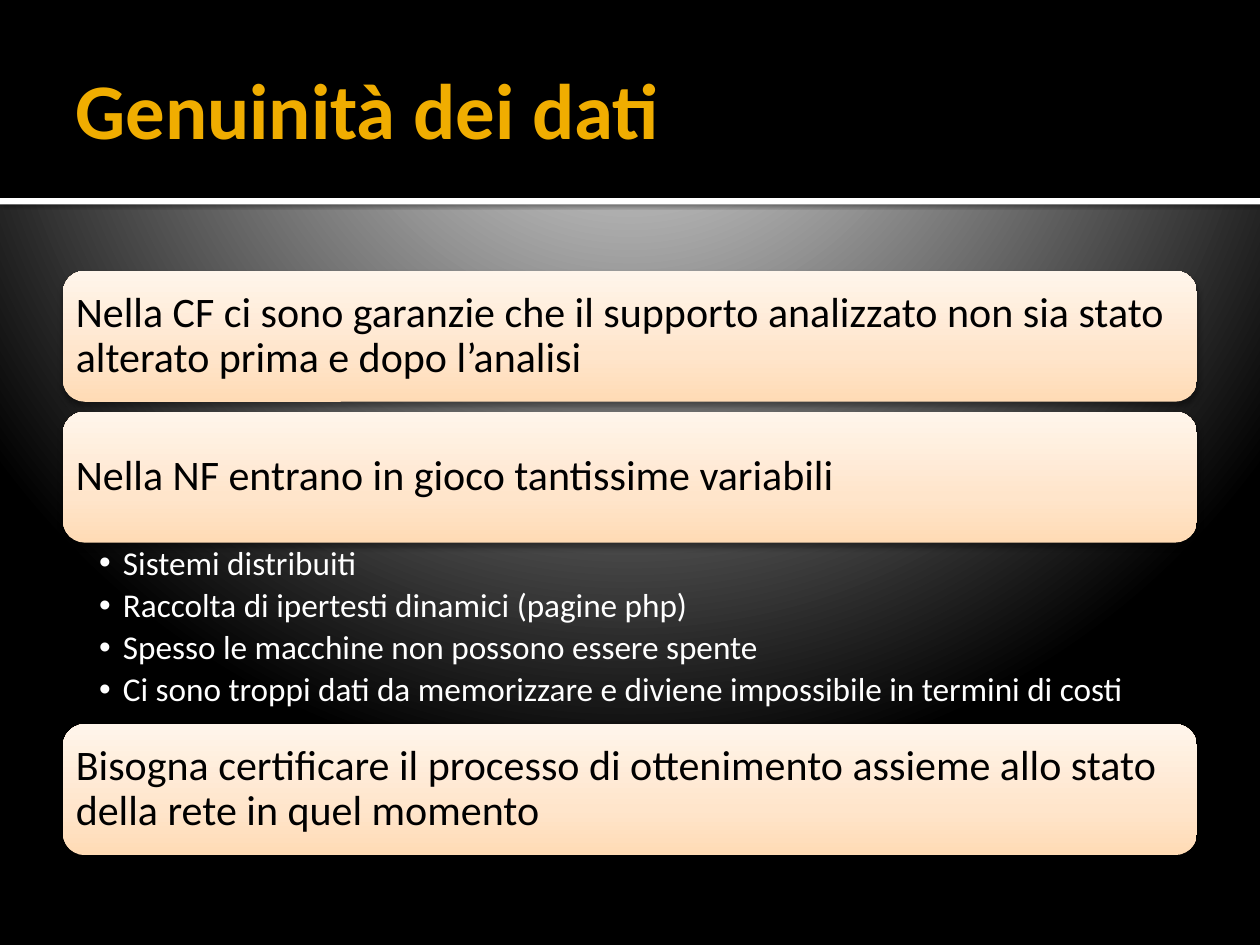
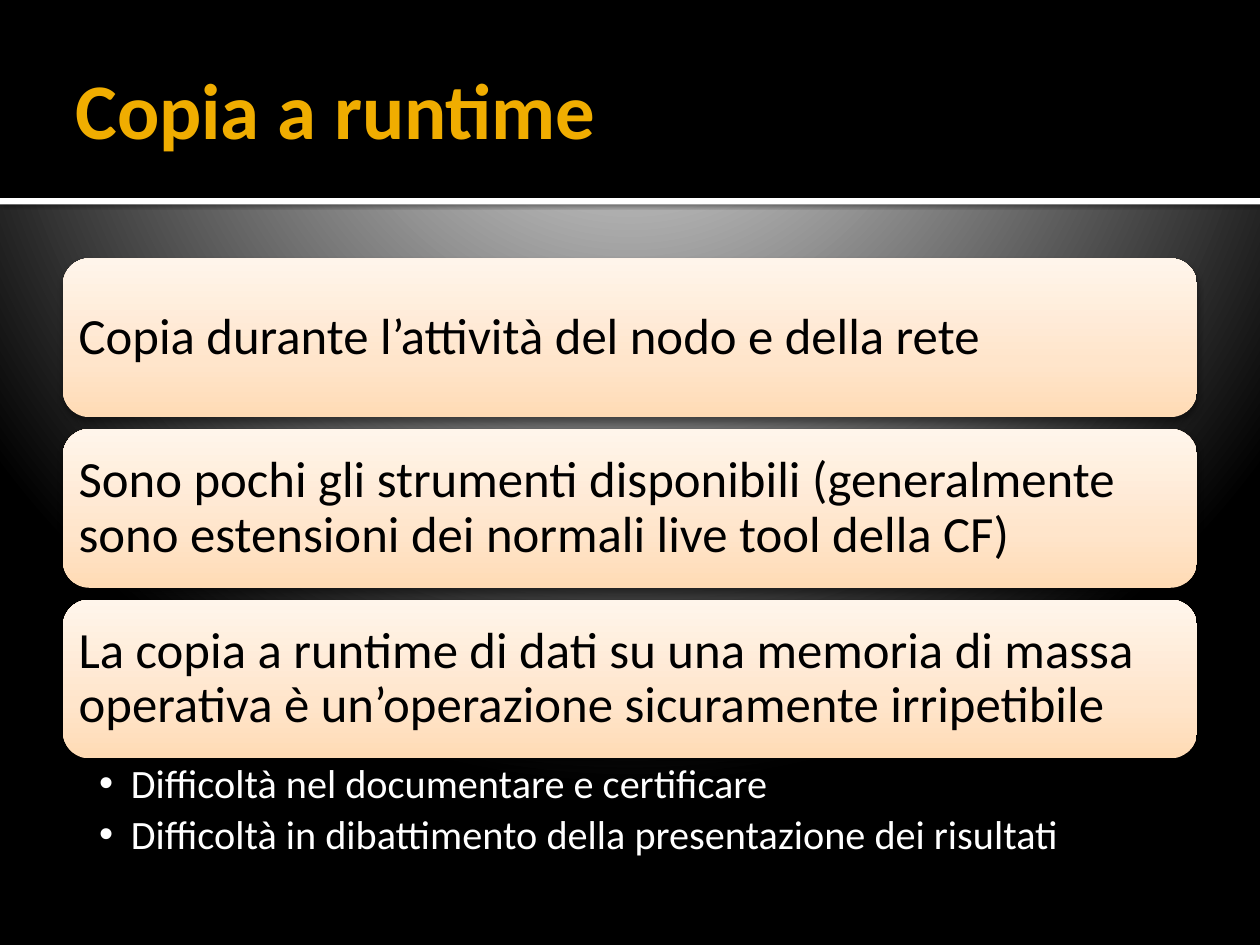
from lxml import etree
from pptx import Presentation
from pptx.dml.color import RGBColor
from pptx.enum.shapes import MSO_SHAPE
from pptx.enum.text import MSO_ANCHOR, PP_ALIGN
from pptx.oxml.ns import qn
from pptx.util import Cm, Pt

RECT = MSO_SHAPE.RECTANGLE
ROUNDED = MSO_SHAPE.ROUNDED_RECTANGLE
MIDDLE = MSO_ANCHOR.MIDDLE
TOP = MSO_ANCHOR.TOP
LEFT = PP_ALIGN.LEFT

FONT = "Calibri"
BLACK, WHITE, GOLD = "000000", "FFFFFF", "F0AD00"
CARD_STOPS = [(0, "FFDBB5"), (35, "FFE5CB"), (100, "FFF5EB")]
BACKDROP_STOPS = [(0, "C0C0C0"), (12, "C0C0C0"), (20, "BEBEBE"), (100, BLACK)]

SLIDE_W, SLIDE_H = 25.4, 19.05
MARGIN = 1.27
CONTENT_W = SLIDE_W - 2 * MARGIN
HEADER_H, STRIPE_H = 3.99, 0.13

SLIDES = [
    {
        "title": "Genuinità dei dati",
        "top": 5.46, "card_h": 2.64, "gap": 0.2, "card_size": 24,
        "list_h": 3.66, "list_size": 19, "indent": 0.48, "list_pad": 0.08,
        "blocks": [
            ("Nella CF ci sono garanzie che il supporto analizzato non sia "
             "stato alterato prima e dopo l’analisi", []),
            ("Nella NF entrano in gioco tantissime variabili", [
                "Sistemi distribuiti",
                "Raccolta di ipertesti dinamici (pagine php)",
                "Spesso le macchine non possono essere spente",
                "Ci sono troppi dati da memorizzare e diviene impossibile "
                "in termini di costi",
            ]),
            ("Bisogna certificare il processo di ottenimento assieme allo "
             "stato della rete in quel momento", []),
        ],
    },
    {
        "title": "Copia a runtime",
        "top": 5.21, "card_h": 3.2, "gap": 0.24, "card_size": 29,
        "list_h": 2.21, "list_size": 23, "indent": 0.64, "list_pad": 0.1,
        "blocks": [
            ("Copia durante l’attività del nodo e della rete", []),
            ("Sono pochi gli strumenti disponibili (generalmente sono "
             "estensioni dei normali live tool della CF)", []),
            ("La copia a runtime di dati su una memoria di massa operativa "
             "è un’operazione sicuramente irripetibile", [
                 "Difficoltà nel documentare e certificare",
                 "Difficoltà in dibattimento della presentazione dei risultati",
             ]),
        ],
    },
]


def rgb(hex_color):
    return RGBColor.from_string(hex_color)


def add_node(parent, tag, **attrs):
    node = etree.SubElement(parent, qn(tag))
    for name, value in attrs.items():
        node.set(name, str(value))
    return node


def set_gradient(fill, container, stops):
    """Give the container a gradient with any number of stops; return its XML."""
    fill.gradient()
    grad = container.find(qn("a:gradFill"))
    for child in list(grad):
        grad.remove(child)
    stop_list = add_node(grad, "a:gsLst")
    for percent, color in stops:
        stop = add_node(stop_list, "a:gs", pos=percent * 1000)
        add_node(stop, "a:srgbClr", val=color)
    return grad


def add_shadow(sp, opacity, blur, distance):
    """Add a black shadow that falls straight down; blur and distance in points."""
    effects = sp._element.spPr.find(qn("a:effectLst"))
    shadow = add_node(effects, "a:outerShdw", blurRad=Pt(blur), dist=Pt(distance),
                      dir=5400000, algn="t", rotWithShape=0)
    color = add_node(shadow, "a:srgbClr", val=BLACK)
    add_node(color, "a:alpha", val=opacity * 1000)


def add_box(slide, kind, left, top, width, height, color=None):
    sp = slide.shapes.add_shape(kind, Cm(left), Cm(top), Cm(width), Cm(height))
    sp.shadow.inherit = False
    sp.line.fill.background()
    if color:
        sp.fill.solid()
        sp.fill.fore_color.rgb = rgb(color)
    return sp


def setup_frame(sp, anchor, left, top, right, bottom):
    tf = sp.text_frame
    tf.word_wrap = True
    tf.vertical_anchor = anchor
    tf.margin_left, tf.margin_top = Cm(left), Cm(top)
    tf.margin_right, tf.margin_bottom = Cm(right), Cm(bottom)
    return tf


def add_run(p, text, size, color, bold=False):
    p.alignment = LEFT
    r = p.add_run()
    r.text = text
    r.font.name = FONT
    r.font.size = Pt(size)
    r.font.bold = bold
    r.font.color.rgb = rgb(color)


def add_backdrop(slide):
    fill = slide.background.fill
    fill.solid()
    bg = slide.element.find(".//" + qn("p:bgPr"))
    grad = set_gradient(fill, bg, BACKDROP_STOPS)
    circle = add_node(grad, "a:path", path="circle")
    add_node(circle, "a:fillToRect", l=10000, t=-25000, r=10000, b=125000)


def add_header(slide, title):
    stripe = add_box(slide, RECT, 0, HEADER_H, SLIDE_W, STRIPE_H, WHITE)
    add_shadow(stripe, 60, 2.5, 0.8)
    add_box(slide, RECT, 0, 0, SLIDE_W, HEADER_H, BLACK)
    sp = slide.shapes.add_textbox(Cm(MARGIN), Cm(0.43), Cm(CONTENT_W), Cm(3.48))
    tf = setup_frame(sp, MIDDLE, 0.25, 0.13, 0.13, 0.13)
    add_run(tf.paragraphs[0], title, 45, GOLD, bold=True)


def add_card(slide, text, top, height, size):
    sp = add_box(slide, ROUNDED, MARGIN, top, CONTENT_W, height)
    grad = set_gradient(sp.fill, sp._element.spPr, CARD_STOPS)
    add_node(grad, "a:lin", ang=16200000, scaled=0)
    add_shadow(sp, 38, 3.5, 2)
    pad = 0.05 * height
    p = setup_frame(sp, MIDDLE, pad, pad, pad, pad).paragraphs[0]
    p.line_spacing = 0.9
    add_run(p, text, size, BLACK)


def add_bullets(slide, items, top, height, size, indent, pad):
    sp = slide.shapes.add_textbox(Cm(MARGIN), Cm(top), Cm(CONTENT_W), Cm(height))
    tf = setup_frame(sp, TOP, 0.73, pad, indent, pad)
    for i, item in enumerate(items):
        p = tf.add_paragraph() if i else tf.paragraphs[0]
        p.line_spacing = 0.9
        p.space_after = Pt(0.19 * size)
        add_run(p, item, size, WHITE)
        pPr = p._p.get_or_add_pPr()
        pPr.set("marL", str(Cm(indent)))
        pPr.set("indent", str(-Cm(indent)))
        add_node(pPr, "a:buFont", typeface="Arial")
        add_node(pPr, "a:buChar", char="•")


def add_blocks(slide, data):
    """Stack the cards; a list touches the cards above and below it."""
    top = data["top"]
    for text, items in data["blocks"]:
        add_card(slide, text, top, data["card_h"], data["card_size"])
        top += data["card_h"]
        if items:
            add_bullets(slide, items, top, data["list_h"], data["list_size"],
                        data["indent"], data["list_pad"])
            top += data["list_h"]
        else:
            top += data["gap"]


def main():
    prs = Presentation()
    prs.slide_width, prs.slide_height = Cm(SLIDE_W), Cm(SLIDE_H)
    blank = prs.slide_layouts[6]
    for data in SLIDES:
        slide = prs.slides.add_slide(blank)
        add_backdrop(slide)
        add_header(slide, data["title"])
        add_blocks(slide, data)
    prs.save("out.pptx")


if __name__ == "__main__":
    main()
